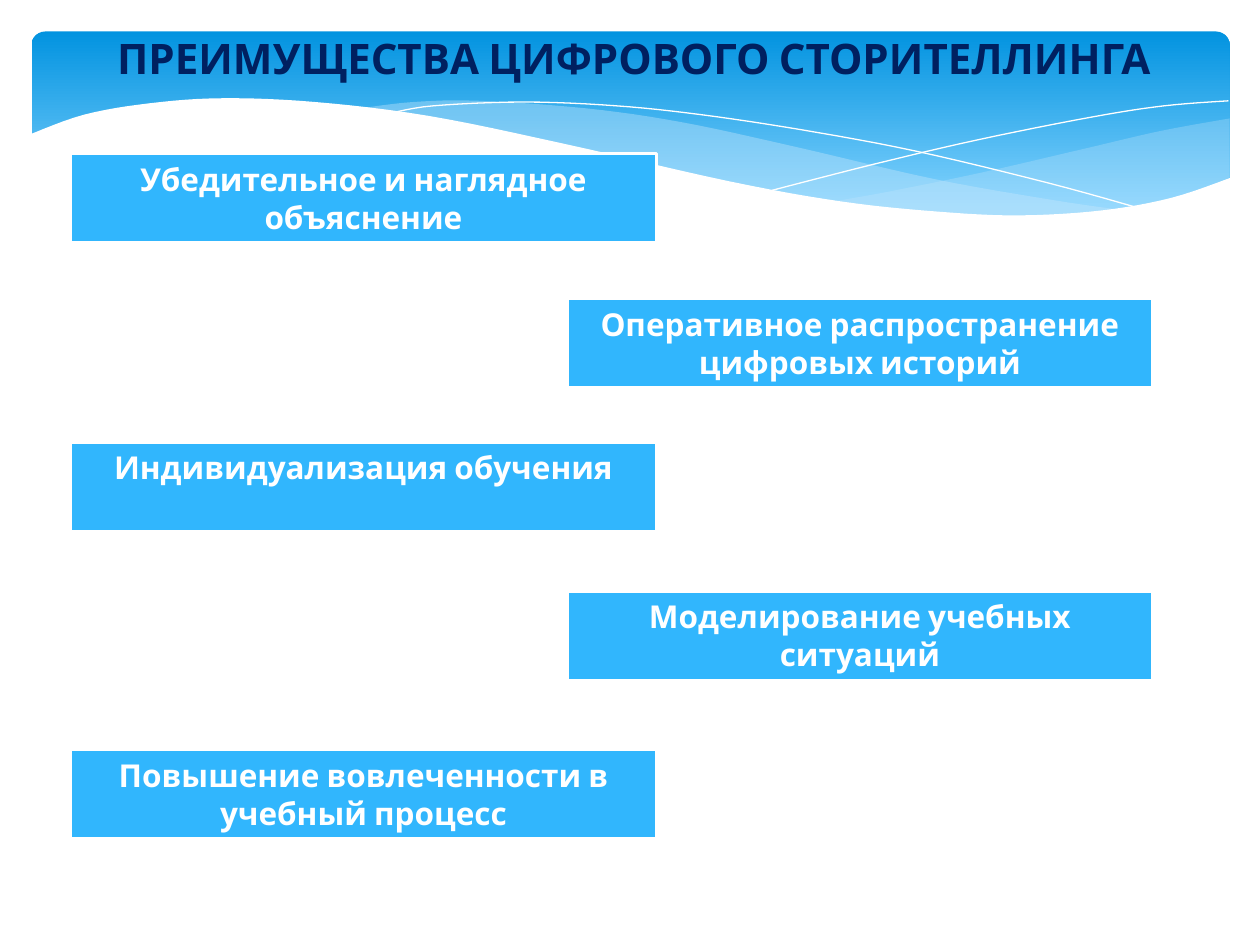
from lxml import etree
from pptx import Presentation
from pptx.dml.color import RGBColor
from pptx.enum.shapes import MSO_SHAPE
from pptx.enum.text import MSO_ANCHOR, PP_ALIGN
from pptx.oxml.ns import qn
from pptx.util import Inches, Pt

RECTANGLE = MSO_SHAPE.RECTANGLE
ROUNDED = MSO_SHAPE.ROUNDED_RECTANGLE
TOP = MSO_ANCHOR.TOP
CENTER = PP_ALIGN.CENTER

FONT = "Cabin"
WHITE, NAVY, BLUE, PALE = "FFFFFF", "002060", "31B6FD", "C6E7FC"
BANNER_STOPS = [(0, "0293E0"), (0.9, "83D3FE")]

TITLE = "ПРЕИМУЩЕСТВА ЦИФРОВОГО СТОРИТЕЛЛИНГА"
LEFT_COLUMN, RIGHT_COLUMN = 0.56, 4.5
CARD_WIDTH, CARD_HEIGHT = 4.65, 0.71
ADVANTAGES = [
    ("Убедительное и наглядное объяснение", 1.22),
    ("Оперативное распространение цифровых историй", 2.37),
    ("Индивидуализация обучения", 3.51),
    ("Моделирование учебных ситуаций", 4.69),
    ("Повышение вовлеченности в учебный процесс", 5.95),
]

# Each wave is a list of curves, and each curve a list of points to pass through.
RIGHT_WAVE = [
    [(9.76, 0.94), (9.21, 1.04), (8.61, 1.18), (7.79, 1.37), (7.06, 1.52), (6.61, 1.6)],
    [(6.61, 1.6), (7.19, 1.67), (7.69, 1.71), (8.14, 1.72), (8.54, 1.7),
     (8.97, 1.65), (9.35, 1.56), (9.76, 1.41)],
]
MIDDLE_WAVE = [
    [(8.93, 1.67), (8.37, 1.59), (7.41, 1.42), (6.29, 1.16), (5.41, 0.97),
     (4.65, 0.86), (3.8, 0.8), (3.28, 0.81), (2.86, 0.86)],
    [(2.86, 0.86), (3.62, 0.97), (4.49, 1.16), (5.66, 1.43), (6.5, 1.58),
     (7.22, 1.68), (7.85, 1.72), (8.38, 1.72), (8.93, 1.67)],
]
FALLING_LINE = [
    [(3.09, 0.9), (3.44, 0.84), (4.16, 0.81), (4.89, 0.84), (5.56, 0.91),
     (6.36, 1.03), (7.27, 1.2), (8.31, 1.45), (9.07, 1.66)],
]
RISING_LINE = [
    [(6.13, 1.51), (6.95, 1.3), (7.76, 1.11), (8.66, 0.93), (9.24, 0.84), (9.75, 0.8)],
]
WHITE_WAVE = [
    [(9.77, 1.41), (9.3, 1.57), (8.75, 1.67), (8.09, 1.71), (7.44, 1.68),
     (6.68, 1.6), (5.79, 1.44), (4.47, 1.14), (3.4, 0.92), (2.5, 0.81),
     (1.77, 0.78), (1.19, 0.82), (0.67, 0.91), (0.23, 1.07)],
    [(0.23, 2.24), (9.77, 2.24)],
]


def color(value):
    return RGBColor.from_string(value)


def smooth(points, steps=6):
    """Return a Catmull-Rom curve through the points."""
    if len(points) < 3:
        return points
    padded = [points[0], *points, points[-1]]
    curve = [points[0]]
    for before, start, end, after in zip(padded, padded[1:], padded[2:], padded[3:]):
        for step in range(1, steps + 1):
            t = step / steps
            curve.append(tuple(
                (2 * b + (c - a) * t + (2 * a - 5 * b + 4 * c - d) * t ** 2
                 + (3 * b - a - 3 * c + d) * t ** 3) / 2
                for a, b, c, d in zip(before, start, end, after)))
    return curve


def add_wave(slide, curves, fill=None, opacity=100, line=None):
    points = [(Inches(x), Inches(y)) for curve in curves for x, y in smooth(curve)]
    builder = slide.shapes.build_freeform(*points[0])
    builder.add_line_segments(points[1:], close=fill is not None)
    shape = builder.convert_to_shape()
    shape.shadow.inherit = False
    if fill:
        shape.fill.solid()
        shape.fill.fore_color.rgb = color(fill)
        if opacity < 100:
            tint = shape._element.xpath("./p:spPr/a:solidFill/a:srgbClr")[0]
            etree.SubElement(tint, qn("a:alpha")).set("val", str(opacity * 1000))
    else:
        shape.fill.background()
    if line:
        shape.line.color.rgb = color(line)
        shape.line.width = Pt(0)
    else:
        shape.line.fill.background()


def add_banner(slide):
    banner = slide.shapes.add_shape(
        ROUNDED, Inches(0.25), Inches(0.25), Inches(9.51), Inches(1.56))
    banner.adjustments[0] = 0.07
    banner.shadow.inherit = False
    banner.line.fill.background()
    banner.fill.gradient()
    banner.fill.gradient_angle = 270
    for stop, (position, value) in zip(banner.fill.gradient_stops, BANNER_STOPS):
        stop.position = position
        stop.color.rgb = color(value)


def write(shape, text, size, text_color):
    frame = shape.text_frame
    frame.word_wrap = True
    frame.vertical_anchor = TOP
    paragraph = frame.paragraphs[0]
    paragraph.alignment = CENTER
    run = paragraph.add_run()
    run.text = text
    run.font.name = FONT
    run.font.size = Pt(size)
    run.font.bold = True
    run.font.color.rgb = color(text_color)


def add_card(slide, text, left, top):
    card = slide.shapes.add_shape(
        RECTANGLE, Inches(left), Inches(top), Inches(CARD_WIDTH), Inches(CARD_HEIGHT))
    card.shadow.inherit = False
    card.fill.solid()
    card.fill.fore_color.rgb = color(BLUE)
    card.line.color.rgb = color(WHITE)
    card.line.width = Pt(2)
    write(card, text, 18, WHITE)


def main():
    presentation = Presentation()
    presentation.slide_width, presentation.slide_height = Inches(10), Inches(7.5)
    slide = presentation.slides.add_slide(presentation.slide_layouts[6])

    add_banner(slide)
    add_wave(slide, RIGHT_WAVE, fill=PALE, opacity=29)
    add_wave(slide, MIDDLE_WAVE, fill=PALE, opacity=40)
    add_wave(slide, FALLING_LINE, line=WHITE)
    add_wave(slide, RISING_LINE, line=WHITE)
    add_wave(slide, WHITE_WAVE, fill=WHITE)

    title = slide.shapes.add_textbox(
        Inches(0.74), Inches(0.21), Inches(8.58), Inches(0.91))
    write(title, TITLE, 24, NAVY)
    for index, (text, top) in enumerate(ADVANTAGES):
        add_card(slide, text, RIGHT_COLUMN if index % 2 else LEFT_COLUMN, top)

    presentation.save("out.pptx")


if __name__ == "__main__":
    main()
